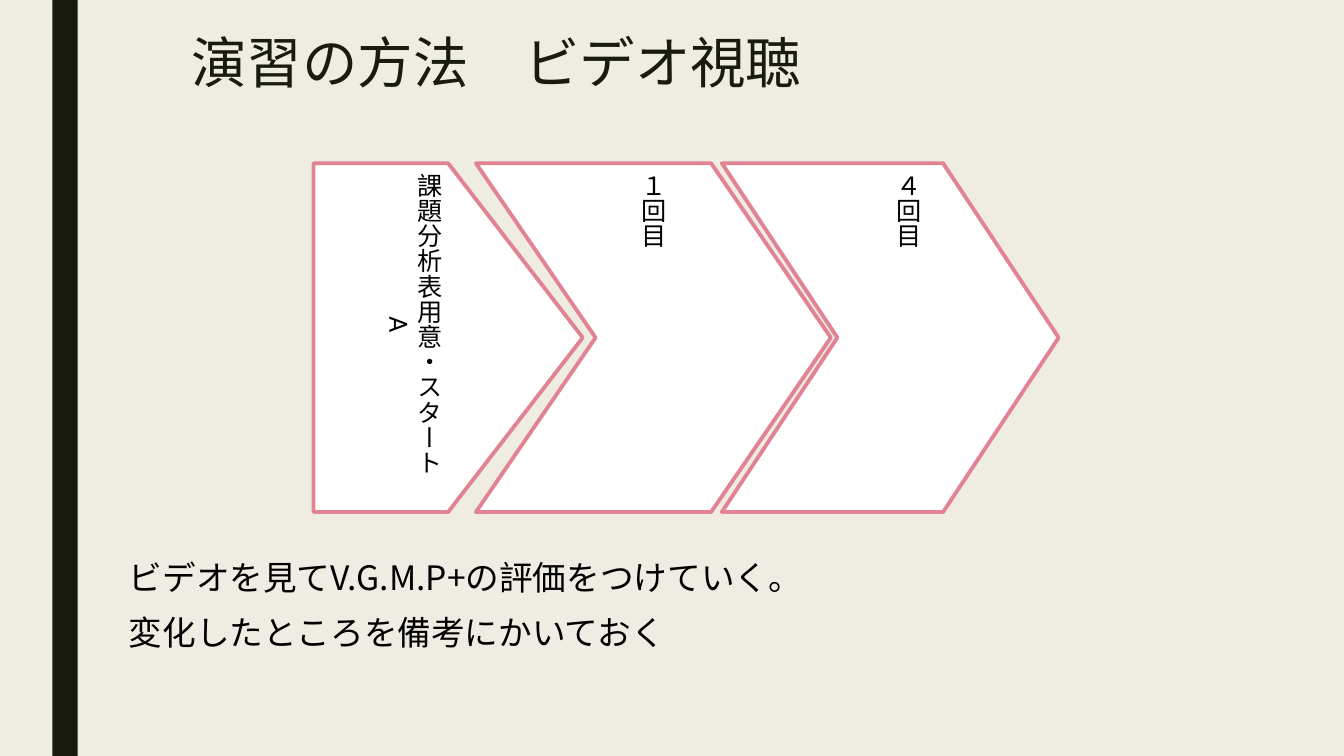
from pptx import Presentation
from pptx.dml.color import RGBColor
from pptx.enum.shapes import MSO_SHAPE as SHAPE
from pptx.enum.text import MSO_ANCHOR as ANCHOR, PP_ALIGN as ALIGN
from pptx.util import Inches, Pt

COLORS = {"paper": "EFEDE3", "ink": "191B0E", "white": "FFFFFF", "pink": "E28394", "black": "000000"}
TITLE = ["演習の方法　ビデオ視聴"]
NOTES = ["ビデオを見てV.G.M.P+の評価をつけていく。", "変化したところを備考にかいておく"]
STEPS = [
    {"lines": ["課題分析表用意・スタート", "A"], "kind": SHAPE.PENTAGON, "left": 3.11,
     "width": 2.67, "adj": 0.5, "align": ALIGN.CENTER, "inset": 0.1},
    {"lines": ["１回目"], "kind": SHAPE.CHEVRON, "left": 4.72,
     "width": 3.52, "adj": 0.343, "align": ALIGN.LEFT, "inset": 0.1},
    {"lines": ["４回目"], "kind": SHAPE.CHEVRON, "left": 7.16,
     "width": 3.34, "adj": 0.343, "align": ALIGN.LEFT, "inset": 0.4},
]
STEP_TOP, STEP_HEIGHT = 1.62, 3.46


def rgb(name):
    return RGBColor.from_string(COLORS[name])


def write(tf, lines, size, font, color="black", align=ALIGN.LEFT, spacing=None, before=0, after=0):
    tf.word_wrap = True
    for i, line in enumerate(lines):
        p = tf.paragraphs[0] if i == 0 else tf.add_paragraph()
        p.alignment, p.line_spacing = align, spacing
        p.space_before, p.space_after = Pt(before), Pt(after)
        r = p.add_run()
        r.text = line
        r.font.size, r.font.name = Pt(size), font
        r.font.color.rgb = rgb(color)


def add_block(s, kind, left, top, width, height, fill):
    sp = s.shapes.add_shape(kind, Inches(left), Inches(top), Inches(width), Inches(height))
    sp.shadow.inherit = False
    sp.fill.solid()
    sp.fill.fore_color.rgb = rgb(fill)
    sp.line.fill.background()
    return sp


def add_step(s, step):
    sp = add_block(s, step["kind"], step["left"], STEP_TOP, step["width"], STEP_HEIGHT, "white")
    sp.adjustments[0] = step["adj"]
    sp.line.color.rgb = rgb("pink")
    sp.line.width = Pt(2.75)
    tf = sp.text_frame
    write(tf, step["lines"], 18, "Roboto", align=step["align"])
    tf.vertical_anchor = ANCHOR.MIDDLE
    tf.margin_left = Inches(step["inset"])
    tf._txBody.bodyPr.set("vert", "eaVert")


def main():
    """Build the video viewing slide."""
    prs = Presentation()
    prs.slide_width, prs.slide_height = Inches(13.33), Inches(7.5)
    s = prs.slides.add_slide(prs.slide_layouts[6])
    s.background.fill.solid()
    s.background.fill.fore_color.rgb = rgb("paper")
    add_block(s, SHAPE.RECTANGLE, 0.52, 0, 0.25, 7.5, "ink")
    title = s.shapes.add_textbox(Inches(1.8), Inches(0.37), Inches(10.5), Inches(0.57)).text_frame
    write(title, TITLE, 39.6, "Roboto", "ink", spacing=0.89)
    title.vertical_anchor = ANCHOR.MIDDLE
    notes = s.shapes.add_textbox(Inches(1.18), Inches(5.51), Inches(10.5), Inches(1.8)).text_frame
    write(notes, NOTES, 24, "Noto Sans CJK JP", spacing=0.94, before=10, after=2)
    for step in STEPS:
        add_step(s, step)
    prs.save("out.pptx")


if __name__ == "__main__":
    main()
